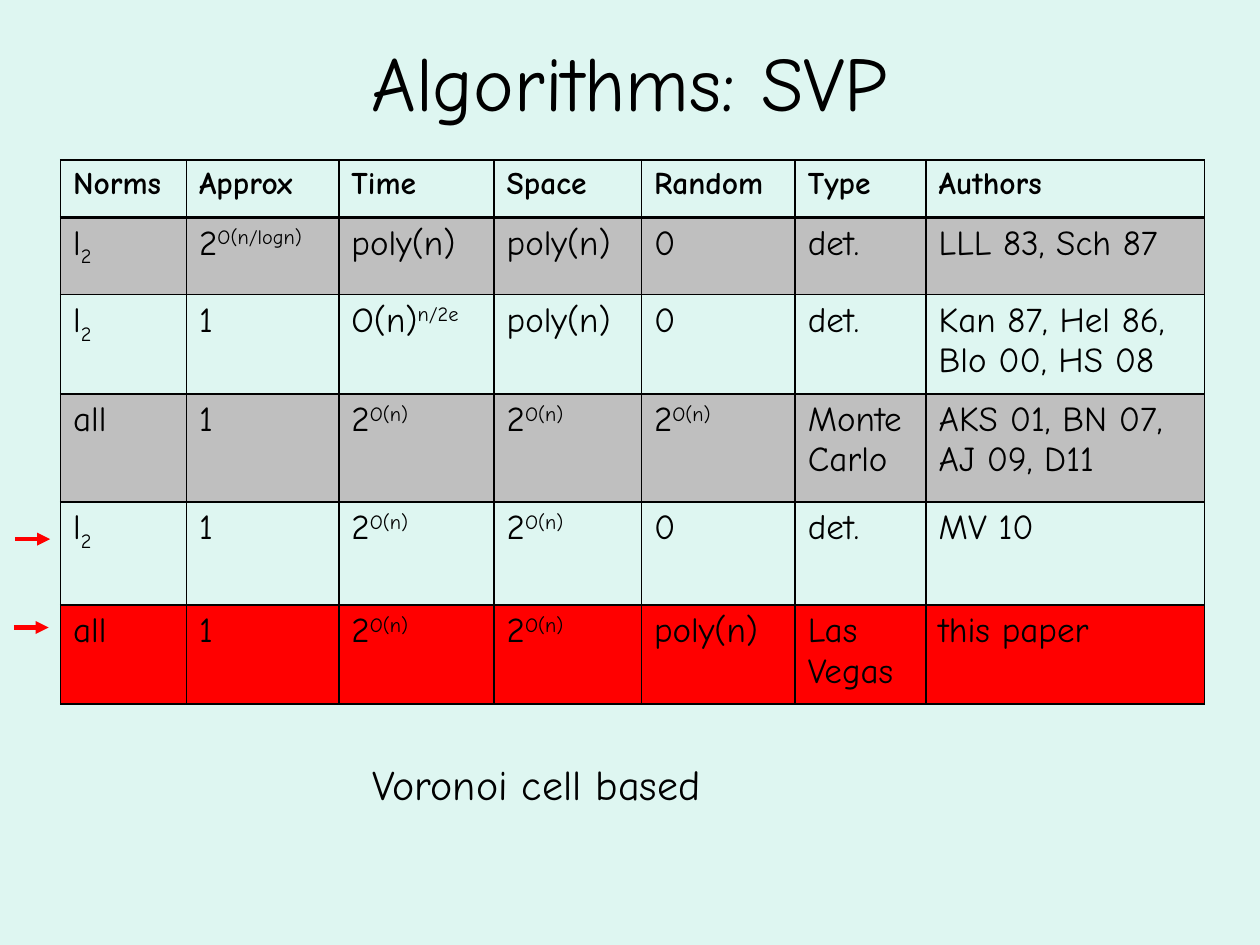
from lxml import etree
from pptx import Presentation
from pptx.dml.color import RGBColor
from pptx.enum.shapes import MSO_CONNECTOR
from pptx.enum.text import MSO_ANCHOR, PP_ALIGN
from pptx.oxml.ns import qn
from pptx.util import Cm, Pt

LINE = MSO_CONNECTOR.STRAIGHT
MIDDLE, TOP = MSO_ANCHOR.MIDDLE, MSO_ANCHOR.TOP
LEFT, CENTER = PP_ALIGN.LEFT, PP_ALIGN.CENTER

FONT = "Comic Neue"
COLORS = {"back": "DEF6F1", "ink": "000000", "band": "BFBFBF", "mark": "FF0000"}
SHIFTS = {"^": "30000", "_": "-25000"}

COLS = [2.54, 3.07, 3.13, 2.97, 3.1, 2.64, 5.61]
ROWS = [  # height, fill, cells; ^ raises and _ lowers the rest of a cell
    (1.15, None, ["Norms", "Approx", "Time", "Space", "Random", "Type", "Authors"]),
    (1.56, "band", ["l_2", "2^O(n/logn)", "poly(n)", "poly(n)", "0", "det.",
                    "LLL 83, Sch 87"]),
    (2.0, None, ["l_2", "1", "O(n)^n/2e", "poly(n)", "0", "det.",
                 "Kan 87, Hel 86, Blo 00, HS 08"]),
    (2.18, "band", ["all", "1", "2^O(n)", "2^O(n)", "2^O(n)", "Monte Carlo",
                    "AKS 01, BN 07, AJ 09, D11"]),
    (2.08, None, ["l_2", "1", "2^O(n)", "2^O(n)", "0", "det.", "MV 10"]),
    (1.99, "mark", ["all", "1", "2^O(n)", "2^O(n)", "poly(n)", "Las Vegas",
                    "this paper"]),
]


def color(name):
    return RGBColor.from_string(COLORS[name])


def style(run, size, bold=False):
    font = run.font
    font.name, font.size, font.bold = FONT, Pt(size), bold
    font.color.rgb = color("ink")


def add_text(slide, box, text, size, align, anchor):
    frame = slide.shapes.add_textbox(*map(Cm, box)).text_frame
    frame.word_wrap = True
    frame.vertical_anchor = anchor
    frame.text = text
    para = frame.paragraphs[0]
    para.alignment = align
    style(para.runs[0], size)


def write(cell, text, size, bold):
    """Fill a cell with its base text and any raised or lowered part."""
    para = cell.text_frame.paragraphs[0]
    para.alignment = LEFT
    mark = next((m for m in SHIFTS if m in text), "^")
    base, _, script = text.partition(mark)
    para.text = base
    if script:
        run = para.add_run()
        run.text = script
        run.font._element.set("baseline", SHIFTS[mark])
    for run in para.runs:
        style(run, size, bold)


def add_edges(cell, widths):
    props = cell._tc.get_or_add_tcPr()
    for side, width in widths.items():
        edge = etree.SubElement(props, qn("a:ln" + side), w=str(Pt(width)))
        fill = etree.SubElement(edge, qn("a:solidFill"))
        etree.SubElement(fill, qn("a:srgbClr"), val=COLORS["ink"])


def add_grid(slide, left, top):
    heights = [row[0] for row in ROWS]
    table = slide.shapes.add_table(
        len(ROWS), len(COLS), Cm(left), Cm(top), Cm(sum(COLS)), Cm(sum(heights))
    ).table
    table.horz_banding = False
    for col, width in zip(table.columns, COLS):
        col.width = Cm(width)
    for r, (height, fill, texts) in enumerate(ROWS):
        table.rows[r].height = Cm(height)
        head = r == 0
        widths = {"L": 1, "R": 1, "T": 2 if r == 1 else 1, "B": 2 if head else 1}
        for c, text in enumerate(texts):
            cell = table.cell(r, c)
            write(cell, text, 18 if head else 20, head)
            add_edges(cell, widths)
            if fill:
                cell.fill.solid()
                cell.fill.fore_color.rgb = color(fill)
            else:
                cell.fill.background()


def add_arrow(slide, left, top, width):
    arrow = slide.shapes.add_connector(
        LINE, Cm(left), Cm(top), Cm(left + width), Cm(top))
    arrow.line.color.rgb = color("mark")
    arrow.line.width = Pt(2.5)
    etree.SubElement(arrow.line._get_or_add_ln(), qn("a:tailEnd"), type="triangle")
    etree.SubElement(arrow._element.spPr, qn("a:effectLst"))


def main():
    deck = Presentation()
    deck.slide_width, deck.slide_height = Cm(25.4), Cm(19.05)
    slide = deck.slides.add_slide(deck.slide_layouts[6])
    slide.background.fill.solid()
    slide.background.fill.fore_color.rgb = color("back")

    add_text(slide, (1.27, 0.03, 22.86, 3.18), "Algorithms: SVP", 44, CENTER, MIDDLE)
    add_grid(slide, 1.22, 3.23)
    add_text(slide, (7.26, 15.16, 13.51, 2.13), "Voronoi cell based", 24, LEFT, TOP)
    for left, top in [(0.31, 10.87), (0.28, 12.65)]:
        add_arrow(slide, left, top, 0.7)
    deck.save("out.pptx")


if __name__ == "__main__":
    main()
